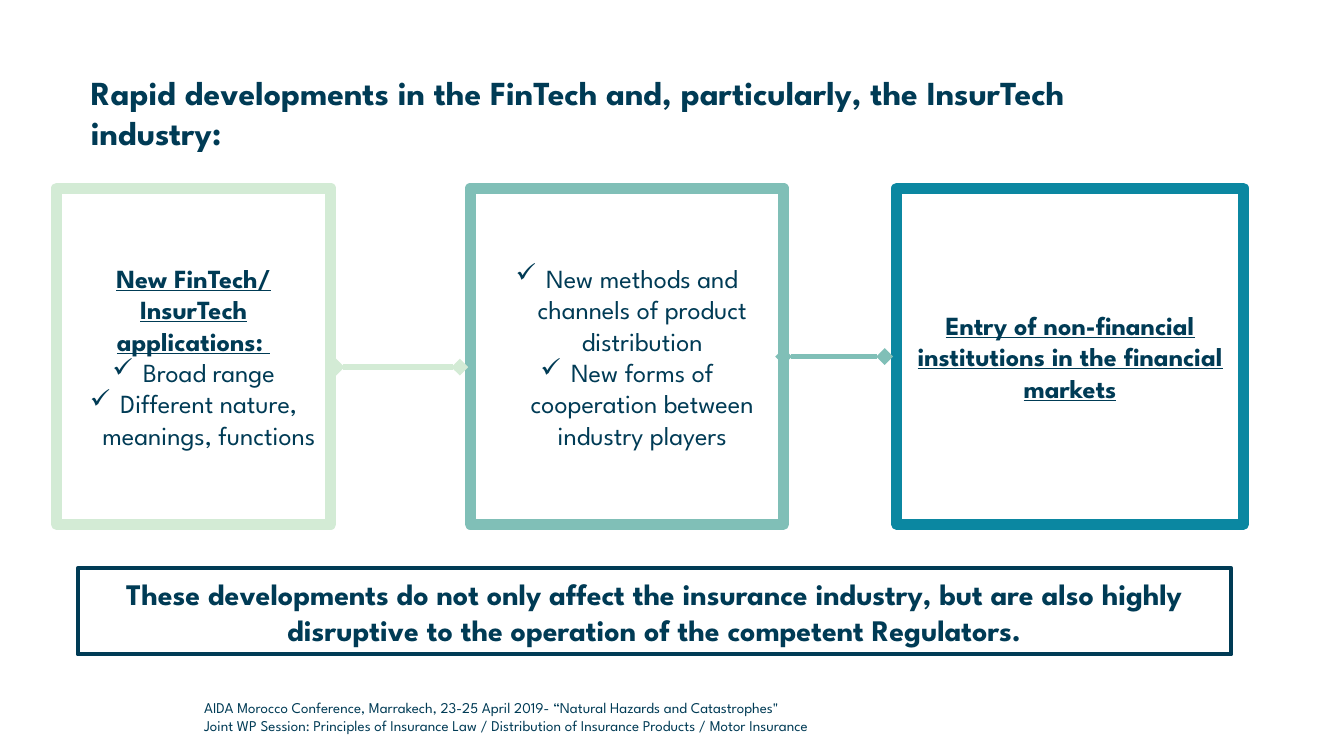
from collections import namedtuple
from dataclasses import dataclass

from lxml.etree import SubElement
from pptx import Presentation
from pptx.dml.color import RGBColor
from pptx.enum.shapes import MSO_CONNECTOR, MSO_SHAPE
from pptx.enum.text import MSO_ANCHOR, PP_ALIGN
from pptx.oxml.ns import qn
from pptx.util import Cm, Pt

Box = namedtuple("Box", "left top width height")


@dataclass(frozen=True)
class Theme:
    """Colours and type sizes of the slide."""

    font: str = "League Spartan"
    ink: str = "003B55"
    mint: str = "D3EBD5"
    sage: str = "80BFB7"
    teal: str = "0B87A1"
    title: int = 18
    conclusion: int = 16
    body: int = 14
    footer: int = 8


THEME = Theme()


def add_bullet(paragraph, indent=0.58):
    """Give a paragraph a hanging check mark."""
    properties = paragraph._p.get_or_add_pPr()
    properties.set("marL", str(Cm(indent)))
    properties.set("indent", str(-Cm(indent)))
    SubElement(properties, qn("a:buChar")).set("char", "✓")


def write(paragraph, text, size=THEME.body, bold=False, underline=False, align=None, bullet=False):
    """Add formatted text to a paragraph."""
    if bullet:
        add_bullet(paragraph)
    if align is not None:
        paragraph.alignment = align
    run = paragraph.add_run()
    run.text = text
    run.font.name = THEME.font
    run.font.size = Pt(size)
    run.font.bold = bold
    run.font.underline = underline
    run.font.color.rgb = RGBColor.from_string(THEME.ink)


def fill_frame(shape, lines, anchor, vertical_margin, **common):
    """Write one paragraph for each pair of text and format."""
    frame = shape.text_frame
    frame.word_wrap = True
    frame.vertical_anchor = anchor
    frame.margin_left = frame.margin_right = Cm(0.25)
    frame.margin_top = frame.margin_bottom = Cm(vertical_margin)
    for index, (text, style) in enumerate(lines):
        paragraph = frame.add_paragraph() if index else frame.paragraphs[0]
        write(paragraph, text, **common, **style)


def add_text(slide, box, lines, anchor, vertical_margin, **style):
    """Place a plain text box."""
    shape = slide.shapes.add_textbox(*map(Cm, box))
    fill_frame(shape, lines, anchor, vertical_margin, **style)


def add_frame(slide, box, color, weight, lines, vertical_margin=0.25, **style):
    """Place an outlined rectangle with centred text."""
    shape = slide.shapes.add_shape(MSO_SHAPE.RECTANGLE, *map(Cm, box))
    shape.shadow.inherit = False
    shape.fill.background()
    shape.line.color.rgb = RGBColor.from_string(color)
    shape.line.width = Pt(weight)
    fill_frame(shape, lines, MSO_ANCHOR.MIDDLE, vertical_margin, align=PP_ALIGN.CENTER, **style)


def add_link(slide, start, end, y, color):
    """Draw a horizontal line with a diamond at each end."""
    connector = slide.shapes.add_connector(
        MSO_CONNECTOR.STRAIGHT, Cm(start), Cm(y), Cm(end), Cm(y)
    )
    connector.line.color.rgb = RGBColor.from_string(color)
    connector.line.width = Pt(3)
    line = connector.line._get_or_add_ln()
    for name in ("a:headEnd", "a:tailEnd"):
        SubElement(line, qn(name)).set("type", "diamond")
    SubElement(connector._element.spPr, qn("a:effectLst"))


def add_flow(slide, box):
    """Place the three linked stages inside the box."""
    heading = {"bold": True, "underline": True}
    check = {"bullet": True}
    stages = [
        (0, 5.18, THEME.mint, [
            ("New FinTech/ InsurTech applications: ", heading),
            ("Broad range", check),
            ("Different nature, meanings, functions ", check),
        ]),
        (7.82, 5.92, THEME.sage, [
            ("New methods and channels of product distribution", check),
            ("New forms of cooperation between industry players", check),
        ]),
        (15.88, 6.55, THEME.teal, [
            ("Entry of non-financial institutions in the financial markets", heading),
        ]),
    ]
    for offset, width, color, lines in stages:
        stage = Box(box.left + offset, box.top, width, box.height)
        add_frame(slide, stage, color, 6, lines)
    links = [(5.28, 7.62, 3.38, THEME.mint), (13.74, 15.65, 3.18, THEME.sage)]
    for start, end, y, color in links:
        add_link(slide, box.left + start, box.left + end, box.top + y, color)


def add_title(slide, box):
    """Place the slide title."""
    title = "Rapid developments in the FinTech and, particularly, the InsurTech industry:"
    add_text(slide, box, [(title, {})], MSO_ANCHOR.BOTTOM, 0.25, size=THEME.title, bold=True)


def add_conclusion(slide, box):
    """Place the framed conclusion."""
    conclusion = (
        "These developments do not only affect the insurance industry, but are also "
        "highly disruptive to the operation of the competent Regulators."
    )
    add_frame(slide, box, THEME.ink, 2.25, [(conclusion, {})], 0.13,
              size=THEME.conclusion, bold=True)


def add_footer(slide, box):
    """Place the conference details."""
    lines = [
        ("AIDA Morocco Conference, Marrakech, 23-25 April 2019- “Natural Hazards and Catastrophes\"", {}),
        ("Joint WP Session: Principles of Insurance Law / Distribution of Insurance Products / Motor Insurance", {}),
    ]
    add_text(slide, box, lines, MSO_ANCHOR.TOP, 0.13, size=THEME.footer)


def main():
    """Build and save the presentation."""
    presentation = Presentation()
    presentation.slide_width = Cm(25.4)
    presentation.slide_height = Cm(14.29)
    slide = presentation.slides.add_slide(presentation.slide_layouts[6])
    add_footer(slide, Box(3.61, 13.08, 17.15, 0.94))
    add_title(slide, Box(1.47, 0.79, 21.16, 2.34))
    add_flow(slide, Box(1.07, 3.56, 22.43, 6.35))
    add_conclusion(slide, Box(1.47, 10.74, 21.8, 1.63))
    presentation.save("out.pptx")


if __name__ == "__main__":
    main()
